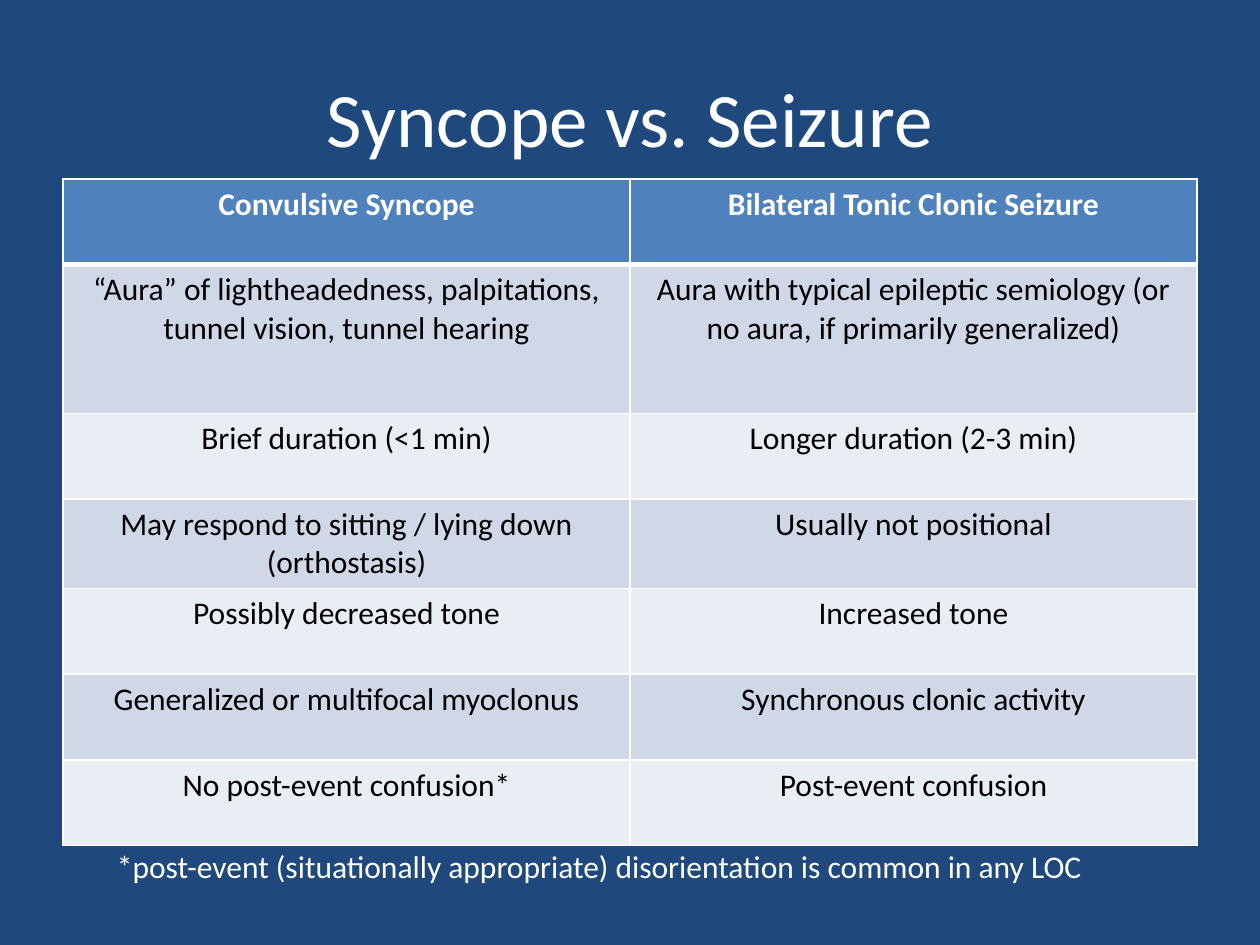
from lxml import etree
from pptx import Presentation
from pptx.dml.color import RGBColor
from pptx.enum.text import MSO_ANCHOR, MSO_AUTO_SIZE, PP_ALIGN
from pptx.oxml.ns import qn
from pptx.util import Inches, Pt

TITLE = "Syncope vs. Seizure"
ROWS = [
    ("Convulsive Syncope", "Bilateral Tonic Clonic Seizure"),
    ("“Aura” of lightheadedness, palpitations, tunnel vision, tunnel hearing",
     "Aura with typical epileptic semiology (or no aura, if primarily generalized)"),
    ("Brief duration (<1 min)", "Longer duration (2-3 min)"),
    ("May respond to sitting / lying down (orthostasis)", "Usually not positional"),
    ("Possibly decreased tone", "Increased tone"),
    ("Generalized or multifocal myoclonus", "Synchronous clonic activity"),
    ("No post-event confusion*", "Post-event confusion"),
]
FOOTNOTE = "*post-event (situationally appropriate) disorientation is common in any LOC"

COLORS = {
    "background": "1F497D",
    "header": "4F81BD",
    "dark band": "D0D8E8",
    "light band": "E9EDF4",
    "white": "FFFFFF",
    "black": "000000",
}
FONT = "Calibri"
ROW_HEIGHT, AURA_ROW_HEIGHT = 0.68, 1.18
COLUMN_WIDTH = 4.5


def rgb(name):
    return RGBColor.from_string(COLORS[name])


def write(text_frame, text, size, color, align=PP_ALIGN.CENTER, bold=False):
    paragraph = text_frame.paragraphs[0]
    paragraph.alignment = align
    run = paragraph.add_run()
    run.text = text
    run.font.name = FONT
    run.font.size = Pt(size)
    run.font.bold = bold
    run.font.color.rgb = rgb(color)


def add_borders(cell, widths):
    """Draw white cell borders; widths maps a side (L, R, T, B) to points."""
    properties = cell._tc.get_or_add_tcPr()
    for index, (side, width) in enumerate(widths.items()):
        line = etree.Element(qn(f"a:ln{side}"), w=str(Pt(width)))
        fill = etree.SubElement(line, qn("a:solidFill"))
        etree.SubElement(fill, qn("a:srgbClr"), val=COLORS["white"])
        properties.insert(index, line)


def add_comparison_table(slide):
    heights = [AURA_ROW_HEIGHT if i == 1 else ROW_HEIGHT for i in range(len(ROWS))]
    table = slide.shapes.add_table(
        len(ROWS), 2, Inches(0.5), Inches(1.42),
        Inches(2 * COLUMN_WIDTH), Inches(sum(heights))).table
    for column in table.columns:
        column.width = Inches(COLUMN_WIDTH)
    for i, texts in enumerate(ROWS):
        table.rows[i].height = Inches(heights[i])
        is_header = i == 0
        band = "header" if is_header else "dark band" if i % 2 else "light band"
        for j, text in enumerate(texts):
            cell = table.cell(i, j)
            cell.fill.solid()
            cell.fill.fore_color.rgb = rgb(band)
            add_borders(cell, {"L": 1, "R": 1, "T": 3 if i == 1 else 1,
                               "B": 3 if is_header else 1})
            write(cell.text_frame, text, 18,
                  "white" if is_header else "black", bold=is_header)


def main():
    presentation = Presentation()
    presentation.slide_width, presentation.slide_height = Inches(10), Inches(7.5)
    slide = presentation.slides.add_slide(presentation.slide_layouts[5])
    slide.background.fill.solid()
    slide.background.fill.fore_color.rgb = rgb("background")

    title = slide.shapes.title
    title.left, title.top = Inches(0.5), Inches(0.3)
    title.width, title.height = Inches(9), Inches(1.25)
    title.text_frame.vertical_anchor = MSO_ANCHOR.MIDDLE
    write(title.text_frame, TITLE, 44, "white")

    add_comparison_table(slide)

    footnote = slide.shapes.add_textbox(
        Inches(0.83), Inches(6.67), Inches(7.96), Inches(0.4)).text_frame
    footnote.word_wrap = False
    footnote.auto_size = MSO_AUTO_SIZE.SHAPE_TO_FIT_TEXT
    write(footnote, FOOTNOTE, 18, "white", PP_ALIGN.LEFT)

    presentation.save("out.pptx")


if __name__ == "__main__":
    main()
